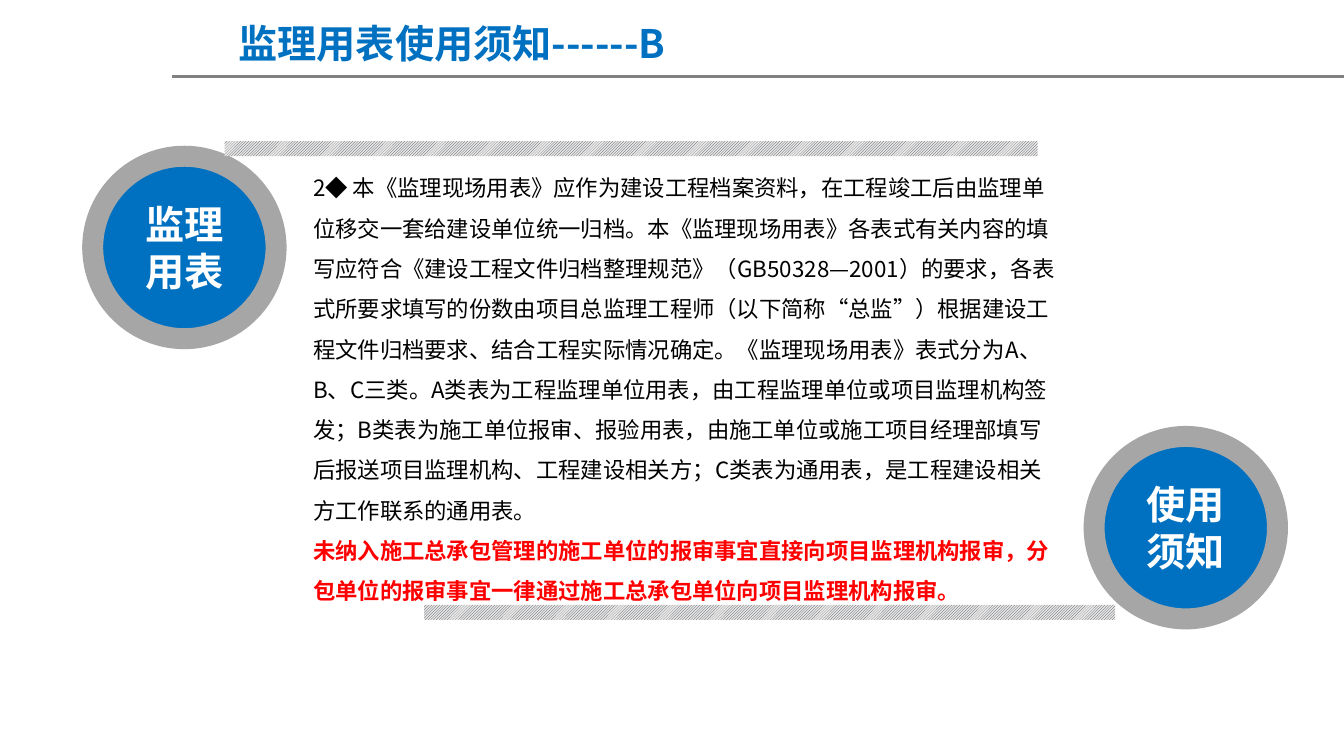
from pptx import Presentation
from pptx.dml.color import RGBColor
from pptx.enum.dml import MSO_PATTERN
from pptx.enum.shapes import MSO_CONNECTOR, MSO_SHAPE
from pptx.enum.text import MSO_ANCHOR, MSO_AUTO_SIZE, PP_ALIGN
from pptx.oxml.ns import qn
from pptx.util import Inches, Pt
from lxml import etree

FONT = "Noto Sans CJK SC"
BLUE = RGBColor(0x00, 0x70, 0xC0)
RED = RGBColor(0xFF, 0x00, 0x00)
BLACK = RGBColor(0x00, 0x00, 0x00)
WHITE = RGBColor(0xFF, 0xFF, 0xFF)
RING_GRAY = RGBColor(0xA6, 0xA6, 0xA6)
RULE_GRAY = RGBColor(0x80, 0x80, 0x80)
HATCH_DARK = RGBColor(0x41, 0x44, 0x55)
HATCH_LIGHT = RGBColor(0xE8, 0xE8, 0xE6)

TITLE = "监理用表使用须知------B"
ARCHIVE_RULES = (
    "2◆ 本《监理现场用表》应作为建设工程档案资料，在工程竣工后由监理单位移交一套给建设单位统一归档。"
    "本《监理现场用表》各表式有关内容的填写应符合《建设工程文件归档整理规范》（GB50328—2001）的要求，"
    "各表式所要求填写的份数由项目总监理工程师（以下简称“总监”）根据建设工程文件归档要求、结合工程实际情况确定。"
    "《监理现场用表》表式分为A、B、C三类。A类表为工程监理单位用表，由工程监理单位或项目监理机构签发；"
    "B类表为施工单位报审、报验用表，由施工单位或施工项目经理部填写后报送项目监理机构、工程建设相关方；"
    "C类表为通用表，是工程建设相关方工作联系的通用表。"
)
SUBMISSION_RULE = (
    "未纳入施工总承包管理的施工单位的报审事宜直接向项目监理机构报审，"
    "分包单位的报审事宜一律通过施工总承包单位向项目监理机构报审。"
)


def write_paragraph(p, text, size, color, bold, align):
    p.text = text
    p.alignment = align
    font = p.font
    font.name = FONT
    font.size = Pt(size)
    font.bold = bold
    font.color.rgb = color
    ea = etree.SubElement(p._p.pPr.find(qn("a:defRPr")), qn("a:ea"))
    ea.set("typeface", FONT)


def set_title(s):
    sp = s.shapes.title
    sp.left, sp.top = Inches(1.89), Inches(0.19)
    sp.width, sp.height = Inches(5.19), Inches(0.57)
    tf = sp.text_frame
    tf.margin_left = tf.margin_right = tf.margin_top = tf.margin_bottom = 0
    tf.vertical_anchor = MSO_ANCHOR.TOP
    tf.auto_size = MSO_AUTO_SIZE.SHAPE_TO_FIT_TEXT
    write_paragraph(tf.paragraphs[0], TITLE, 28, BLUE, True, PP_ALIGN.CENTER)


def add_title_rule(s):
    line = s.shapes.add_connector(
        MSO_CONNECTOR.STRAIGHT, Inches(1.71), Inches(0.76), Inches(13.34), Inches(0.76))
    line.line.color.rgb = RULE_GRAY
    line.line.width = Pt(2)
    etree.SubElement(line._element.spPr, qn("a:effectLst"))


def add_badge(s, left, top, text):
    sp = s.shapes.add_shape(
        MSO_SHAPE.OVAL, Inches(left), Inches(top), Inches(1.82), Inches(1.81))
    sp.shadow.inherit = False
    sp.fill.solid()
    sp.fill.fore_color.rgb = BLUE
    sp.line.color.rgb = RING_GRAY
    sp.line.width = Pt(15)
    tf = sp.text_frame
    tf.word_wrap = True
    tf.vertical_anchor = MSO_ANCHOR.MIDDLE
    write_paragraph(tf.paragraphs[0], text, 28, WHITE, True, PP_ALIGN.CENTER)


def add_hatched_bar(s, left, top, width):
    sp = s.shapes.add_shape(
        MSO_SHAPE.RECTANGLE, Inches(left), Inches(top), Inches(width), Inches(0.15))
    sp.shadow.inherit = False
    sp.fill.patterned()
    sp.fill.pattern = MSO_PATTERN.LIGHT_UPWARD_DIAGONAL
    sp.fill.fore_color.rgb = HATCH_DARK
    sp.fill.back_color.rgb = HATCH_LIGHT
    sp.line.fill.background()


def add_body(s):
    sp = s.shapes.add_textbox(Inches(3.01), Inches(1.55), Inches(7.58), Inches(4.54))
    tf = sp.text_frame
    tf.word_wrap = True
    tf.auto_size = MSO_AUTO_SIZE.SHAPE_TO_FIT_TEXT
    rules, submission = tf.paragraphs[0], tf.add_paragraph()
    write_paragraph(rules, ARCHIVE_RULES, 16, BLACK, False, PP_ALIGN.LEFT)
    write_paragraph(submission, SUBMISSION_RULE, 16, RED, True, PP_ALIGN.LEFT)
    for p in tf.paragraphs:
        p.line_spacing = 1.5


def main():
    prs = Presentation()
    prs.slide_width, prs.slide_height = Inches(13.34), Inches(7.5)
    s = prs.slides.add_slide(prs.slide_layouts.get_by_name("Title Only"))
    add_title_rule(s)
    set_title(s)
    add_badge(s, 0.92, 1.55, "监理用表")
    add_body(s)
    add_hatched_bar(s, 2.23, 1.4, 8.07)
    add_badge(s, 10.86, 4.33, "使用须知")
    add_hatched_bar(s, 4.21, 6, 6.86)
    prs.save("out.pptx")


if __name__ == "__main__":
    main()
